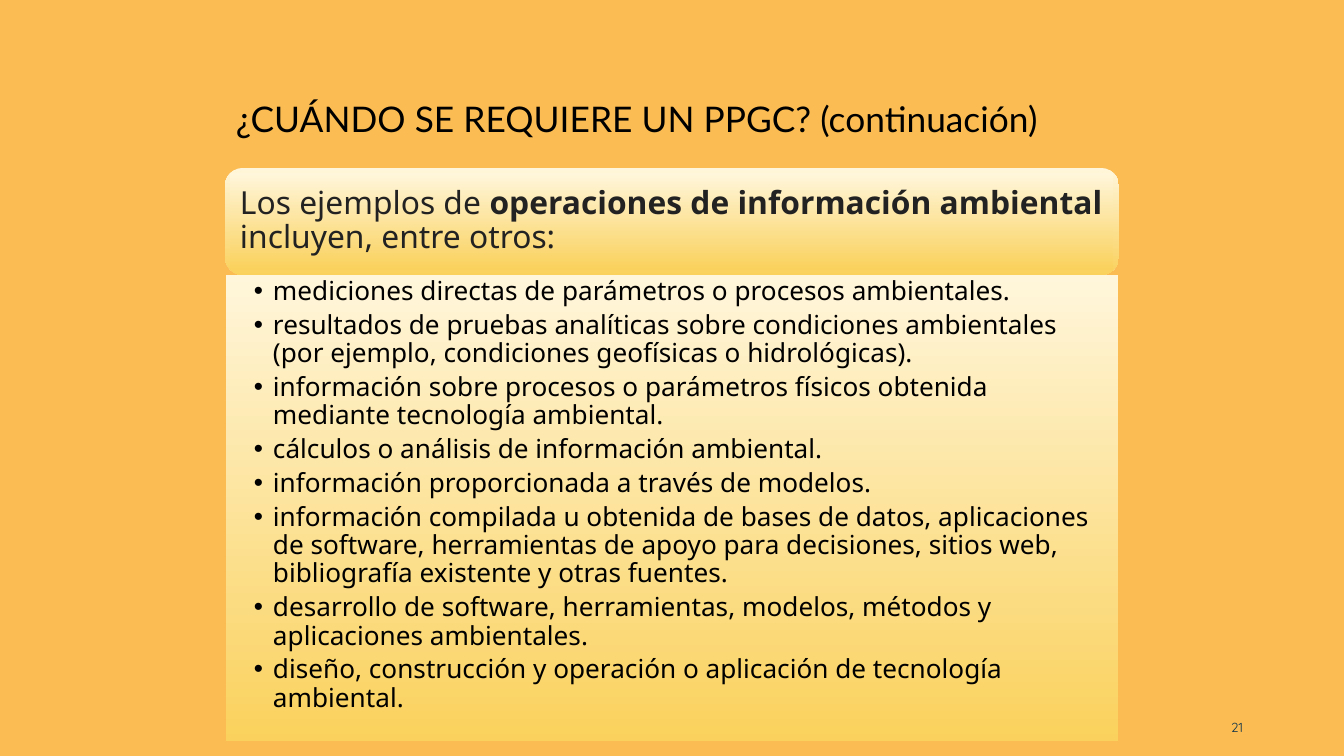
import pptx
import pptx.util
import pptx.dml.color
import pptx.enum.shapes
import pptx.enum.text
import pptx.oxml
import pptx.oxml.ns

SCALE = 9144000 / 1344
COLORS = {"back": "FBBD53", "light": "FFF6DB", "gold": "FAD15C",
          "black": "000000", "gray": "222222", "navy": "09304A"}
ITEMS = [
    "mediciones directas de parámetros o procesos ambientales.",
    "resultados de pruebas analíticas sobre condiciones ambientales (por ejemplo, condiciones geofísicas o hidrológicas).",
    "información sobre procesos o parámetros físicos obtenida mediante tecnología ambiental.",
    "cálculos o análisis de información ambiental.",
    "información proporcionada a través de modelos.",
    "información compilada u obtenida de bases de datos, aplicaciones de software, herramientas de apoyo para decisiones, sitios web, bibliografía existente y otras fuentes.",
    "desarrollo de software, herramientas, modelos, métodos y aplicaciones ambientales.",
    "diseño, construcción y operación o aplicación de tecnología ambiental.",
]
ALIGN = pptx.enum.text.PP_ALIGN
ANCHOR = pptx.enum.text.MSO_ANCHOR
KIND = pptx.enum.shapes.MSO_SHAPE


def setup(shape, box, pad, anchor):
    """Place a shape and set up its text frame, all in px."""
    shape.left, shape.top, shape.width, shape.height = [round(n * SCALE) for n in box]
    frame = shape.text_frame
    frame.word_wrap = True
    frame.auto_size = pptx.enum.text.MSO_AUTO_SIZE.NONE
    frame.vertical_anchor = anchor
    (frame.margin_left, frame.margin_top,
     frame.margin_right, frame.margin_bottom) = [round(n * SCALE) for n in pad]
    return frame


def style(para, size, face, color, align=ALIGN.LEFT):
    """Format a paragraph and all its runs."""
    para.alignment = align
    for run in para.runs:
        run.font.size = pptx.util.Pt(size)
        run.font.name = face
        run.font.color.rgb = pptx.dml.color.RGBColor.from_string(COLORS[color])


deck = pptx.Presentation()
deck.slide_width = round(1344 * SCALE)
deck.slide_height = round(756 * SCALE)
slide = deck.slides.add_slide(deck.slide_layouts[1])
back = slide.background.fill
back.solid()
back.fore_color.rgb = pptx.dml.color.RGBColor.from_string(COLORS["back"])

# Title
title = setup(slide.shapes.title, (226, 47, 929, 98), (10, 5, 10, 5), ANCHOR.BOTTOM)
title.text = "¿CUÁNDO SE REQUIERE UN PPGC? (continuación)"
style(title.paragraphs[0], 18.9, "Lato", "black")

# Slide number
number = setup(slide.shapes.add_textbox(0, 0, 0, 0), (1144, 700, 109, 40),
               (10, 5, 10, 5), ANCHOR.BOTTOM)
number.text = "21"
style(number.paragraphs[0], 7, "Quicksand", "navy", ALIGN.RIGHT)

# Header: rounded band with a text panel on it
band = slide.shapes.add_shape(KIND.ROUNDED_RECTANGLE, 0, 0, 0, 0)
setup(band, (225, 168, 894, 107), (0, 0, 0, 0), ANCHOR.MIDDLE)
panel = slide.shapes.add_shape(KIND.RECTANGLE, 0, 0, 0, 0)
head = setup(panel, (230, 173, 883, 97), (10, 10, 10, 10), ANCHOR.MIDDLE)
lead = head.paragraphs[0]
for text, bold in [("Los ejemplos de ", False),
                   ("operaciones de información ambiental ", True),
                   ("incluyen, entre otros:", False)]:
    run = lead.add_run()
    run.text = text
    run.font.bold = bold
lead.line_spacing = 0.9
style(lead, 17, "Noto Sans", "gray")
for shape in (band, panel):
    shape.shadow.inherit = False

# Bulleted list
body = slide.placeholders[1]
frame = setup(body, (226, 275, 892, 466), (28, 3, 17, 3), ANCHOR.TOP)
frame.text = "\n".join(ITEMS)
for i, para in enumerate(frame.paragraphs):
    para.level = 1
    para.line_spacing = 0.9
    para.space_before = pptx.util.Pt(3 if i else 0)
    para.space_after = pptx.util.Pt(0)
    style(para, 14, "Noto Sans", "black")
    props = para._p.get_or_add_pPr()
    props.set("marL", str(round(19 * SCALE)))
    props.set("indent", str(round(-19 * SCALE)))
    space = pptx.oxml.ns.nsdecls("a")
    for mark in (f'<a:buClr {space}><a:srgbClr val="{COLORS["black"]}"/></a:buClr>',
                 f'<a:buFont {space} typeface="Arial"/>',
                 f'<a:buChar {space} char="•"/>'):
        props.append(pptx.oxml.parse_xml(mark))

# Shared gradient, light at the top and gold at the bottom
for shape in (band, panel, body):
    shape.line.fill.background()
    shape.fill.gradient()
    shape.fill.gradient_angle = 270
    for stop, spot, name in zip(shape.fill.gradient_stops, (0, 1), ("light", "gold")):
        stop.position = spot
        stop.color.rgb = pptx.dml.color.RGBColor.from_string(COLORS[name])

deck.save("out.pptx")
